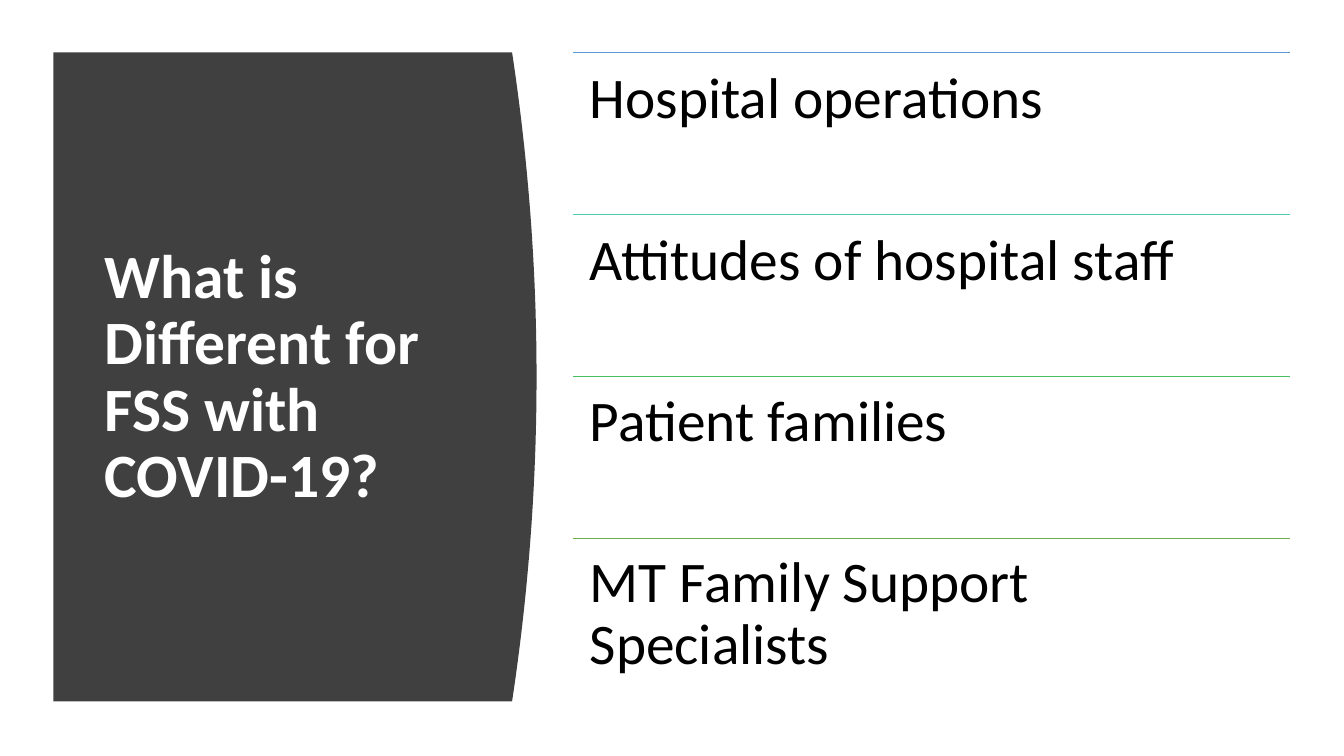
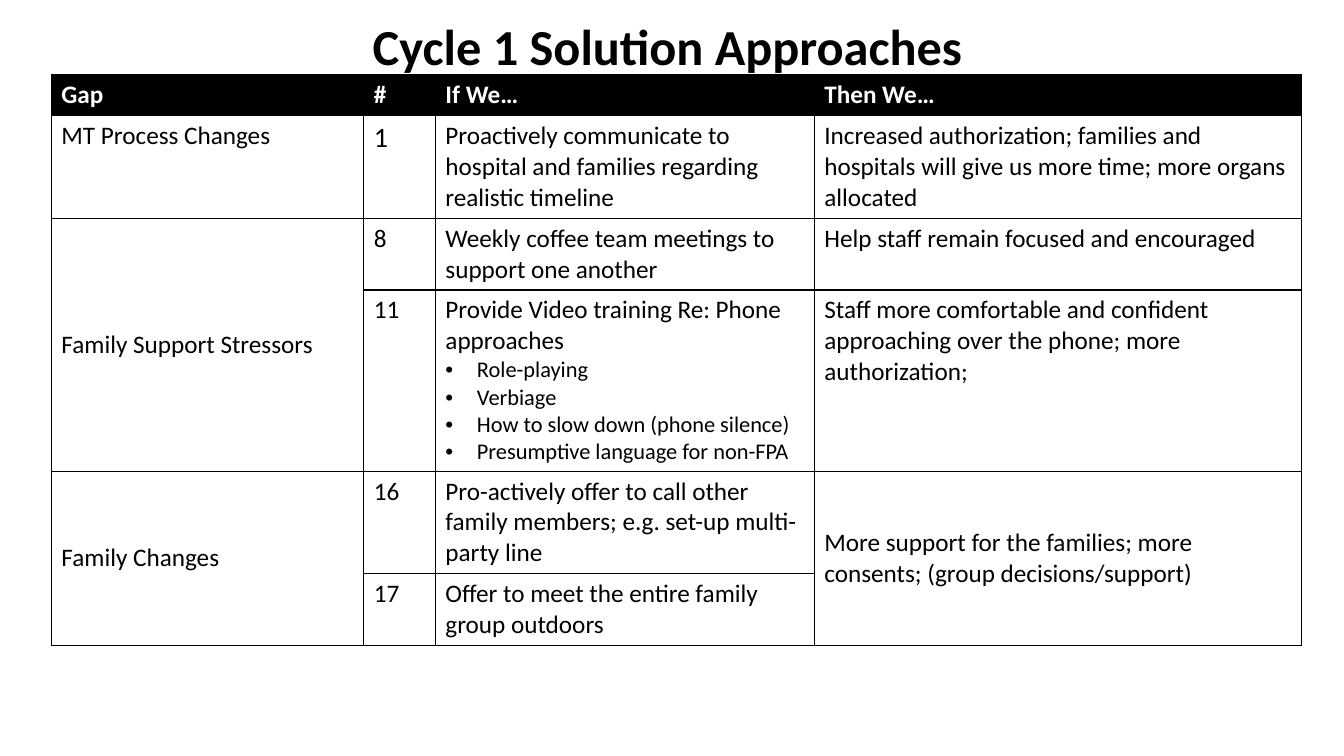
from dataclasses import dataclass

from lxml import etree
from pptx import Presentation
from pptx.dml.color import RGBColor
from pptx.enum.shapes import MSO_CONNECTOR
from pptx.enum.text import MSO_ANCHOR, MSO_AUTO_SIZE, PP_ALIGN
from pptx.oxml.ns import qn
from pptx.slide import Slide
from pptx.util import Pt

STRAIGHT = MSO_CONNECTOR.STRAIGHT
TOP, MIDDLE = MSO_ANCHOR.TOP, MSO_ANCHOR.MIDDLE
LEFT, CENTER = PP_ALIGN.LEFT, PP_ALIGN.CENTER
NO_AUTOFIT = MSO_AUTO_SIZE.NONE
TITLE_AND_CONTENT, TITLE_ONLY = 1, 5


@dataclass(frozen=True)
class Theme:
    font: str = "Calibri"
    black: str = "000000"
    white: str = "FFFFFF"
    panel: str = "404040"
    panel_title: float = 44
    table_title: float = 36
    topic: float = 41
    cell: float = 18
    large_cell: float = 20
    bullet: float = 16
    line_spacing: float = 0.9
    font_height: float = 1.22
    rule_width: float = 1


@dataclass(frozen=True)
class Box:
    left: float
    top: float
    width: float
    height: float

    @property
    def bottom(self) -> float:
        return self.top + self.height


@dataclass(frozen=True)
class Topic:
    text: str
    rule_color: str


@dataclass(frozen=True)
class TableCell:
    row: int
    column: int
    text: str
    bullets: tuple[str, ...] = ()
    size: float = 18
    row_span: int = 1


THEME = Theme()
PANEL = Box(38.2, 37.4, 327.6, 463.7)
PANEL_BULGE = 17.5
CURVE_STEPS = 48
TOPIC_LIST = Box(409, 37.4, 512.6, 463.2)
TOPIC_INSET = 12.2
TOPICS = (
    Topic("Hospital operations", "5B9BD5"),
    Topic("Attitudes of hospital staff", "52CAB8"),
    Topic("Patient families", "49BF64"),
    Topic("MT Family Support Specialists", "70AD47"),
)

TABLE_LEFT, TABLE_TOP = 36.7, 53.3
COLUMN_WIDTHS = (223.2, 51.1, 270.7, 347.8)
ROW_HEIGHTS = (29.5, 73, 51.2, 129, 73, 51.2)
BULLET_INDENT = 22.5
HEADERS = ("Gap", "#", "If We…", "Then We…")
BODY_CELLS = (
    TableCell(1, 0, "MT Process Changes"),
    TableCell(1, 1, "1", size=THEME.large_cell),
    TableCell(1, 2, "Proactively communicate to hospital and families regarding realistic timeline"),
    TableCell(1, 3, "Increased authorization; families and hospitals will give us more time; "
                    "more organs allocated"),
    TableCell(2, 0, "Family Support Stressors", row_span=2),
    TableCell(2, 1, "8"),
    TableCell(2, 2, "Weekly coffee team meetings to support one another"),
    TableCell(2, 3, "Help staff remain focused and encouraged"),
    TableCell(3, 1, "11"),
    TableCell(3, 2, "Provide Video training Re: Phone approaches",
              ("Role-playing", "Verbiage", "How to slow down (phone silence)",
               "Presumptive language for non-FPA")),
    TableCell(3, 3, "Staff more comfortable and confident approaching over the phone; "
                    "more authorization;"),
    TableCell(4, 0, "Family Changes", row_span=2),
    TableCell(4, 1, "16"),
    TableCell(4, 2, "Pro-actively offer to call other family members; e.g. set-up multi-party line"),
    TableCell(4, 3, "More support for the families; more consents; (group decisions/support)",
              row_span=2),
    TableCell(5, 1, "17"),
    TableCell(5, 2, "Offer to meet the entire family group outdoors"),
)


def add_run(paragraph, text: str, size: float, color: str = THEME.black,
            bold: bool = False) -> None:
    run = paragraph.add_run()
    run.text = text
    run.font.name = THEME.font
    run.font.size = Pt(size)
    run.font.bold = bold
    run.font.color.rgb = RGBColor.from_string(color)


def place(shape, box: Box) -> None:
    shape.left, shape.top = Pt(box.left), Pt(box.top)
    shape.width, shape.height = Pt(box.width), Pt(box.height)


def set_bullet(paragraph, character: str = "", indent: float = 0) -> None:
    """Set a hanging bullet, or remove the inherited one when no character is given."""
    properties = paragraph._p.get_or_add_pPr()
    properties.set("marL", str(Pt(indent)))
    properties.set("indent", str(-Pt(indent)))
    if character:
        font = etree.SubElement(properties, qn("a:buFont"))
        font.set("typeface", "Arial")
        etree.SubElement(properties, qn("a:buChar")).set("char", character)
    else:
        etree.SubElement(properties, qn("a:buNone"))


def set_title(slide: Slide, text: str, box: Box, size: float, color: str,
              alignment: PP_ALIGN, anchor: MSO_ANCHOR) -> None:
    title = slide.shapes.title
    place(title, box)
    frame = title.text_frame
    frame.word_wrap = True
    frame.auto_size = NO_AUTOFIT
    frame.vertical_anchor = anchor
    paragraph = frame.paragraphs[0]
    paragraph.alignment = alignment
    paragraph.line_spacing = THEME.line_spacing
    add_run(paragraph, text, size, color, bold=True)


def add_curved_panel(slide: Slide) -> None:
    """Draw the panel with a parabolic right edge, behind the title."""
    edge = []
    for step in range(CURVE_STEPS + 1):
        offset = 2 * step / CURVE_STEPS - 1
        edge.append((Pt(PANEL.left + PANEL.width + PANEL_BULGE * (1 - offset ** 2)),
                     Pt(PANEL.top + PANEL.height * step / CURVE_STEPS)))
    builder = slide.shapes.build_freeform(Pt(PANEL.left), Pt(PANEL.top))
    builder.add_line_segments([*edge, (Pt(PANEL.left), Pt(PANEL.bottom))], close=True)
    panel = builder.convert_to_shape()
    panel.shadow.inherit = False
    panel.fill.solid()
    panel.fill.fore_color.rgb = RGBColor.from_string(THEME.panel)
    panel.line.fill.background()
    slide.shapes.title.element.addprevious(panel.element)


def add_rule(slide: Slide, top: float, color: str) -> None:
    rule = slide.shapes.add_connector(
        STRAIGHT, Pt(TOPIC_LIST.left), Pt(top),
        Pt(TOPIC_LIST.left + TOPIC_LIST.width), Pt(top))
    rule.line.color.rgb = RGBColor.from_string(color)
    rule.line.width = Pt(THEME.rule_width)
    etree.SubElement(rule.element.spPr, qn("a:effectLst"))


def add_topics(slide: Slide) -> None:
    """Fill the body so that each topic starts below its own rule."""
    body = slide.placeholders[1]
    place(body, TOPIC_LIST)
    frame = body.text_frame
    frame.word_wrap = True
    frame.auto_size = NO_AUTOFIT
    frame.vertical_anchor = TOP
    frame.margin_left = frame.margin_right = Pt(TOPIC_INSET)
    frame.margin_top = frame.margin_bottom = Pt(TOPIC_INSET)
    pitch = TOPIC_LIST.height / len(TOPICS)
    line_height = THEME.topic * THEME.font_height * THEME.line_spacing
    for index, topic in enumerate(TOPICS):
        add_rule(slide, TOPIC_LIST.top + index * pitch, topic.rule_color)
        paragraph = frame.add_paragraph() if index else frame.paragraphs[0]
        set_bullet(paragraph)
        paragraph.line_spacing = THEME.line_spacing
        paragraph.space_before = Pt(pitch - line_height if index else 0)
        paragraph.space_after = Pt(0)
        add_run(paragraph, topic.text, THEME.topic)


def set_borders(cell) -> None:
    properties = cell._tc.get_or_add_tcPr()
    for position, side in enumerate(("lnL", "lnR", "lnT", "lnB")):
        line = etree.Element(qn(f"a:{side}"), w=str(Pt(THEME.rule_width)))
        fill = etree.SubElement(line, qn("a:solidFill"))
        etree.SubElement(fill, qn("a:srgbClr")).set("val", THEME.black)
        properties.insert(position, line)


def add_solution_table(slide: Slide) -> None:
    table = slide.shapes.add_table(
        len(ROW_HEIGHTS), len(COLUMN_WIDTHS), Pt(TABLE_LEFT), Pt(TABLE_TOP),
        Pt(sum(COLUMN_WIDTHS)), Pt(sum(ROW_HEIGHTS))).table
    table.horz_banding = False
    for column, width in zip(table.columns, COLUMN_WIDTHS):
        column.width = Pt(width)
    for row, height in zip(table.rows, ROW_HEIGHTS):
        row.height = Pt(height)
    for cell in table.iter_cells():
        cell.fill.background()
        set_borders(cell)

    for column, text in enumerate(HEADERS):
        cell = table.cell(0, column)
        cell.fill.solid()
        cell.fill.fore_color.rgb = RGBColor.from_string(THEME.black)
        add_run(cell.text_frame.paragraphs[0], text, THEME.cell, THEME.white, bold=True)

    for entry in BODY_CELLS:
        cell = table.cell(entry.row, entry.column)
        if entry.row_span > 1:
            cell.merge(table.cell(entry.row + entry.row_span - 1, entry.column))
            cell.vertical_anchor = MIDDLE
        add_run(cell.text_frame.paragraphs[0], entry.text, entry.size)
        for text in entry.bullets:
            paragraph = cell.text_frame.add_paragraph()
            set_bullet(paragraph, "•", BULLET_INDENT)
            add_run(paragraph, text, THEME.bullet)


def add_differences_slide(presentation) -> None:
    slide = presentation.slides.add_slide(presentation.slide_layouts[TITLE_AND_CONTENT])
    set_title(slide, "What is Different for FSS with COVID-19?",
              Box(67.7, 79.9, 269.3, 380), THEME.panel_title, THEME.white, LEFT, MIDDLE)
    add_curved_panel(slide)
    add_topics(slide)


def add_solutions_slide(presentation) -> None:
    slide = presentation.slides.add_slide(presentation.slide_layouts[TITLE_ONLY])
    set_title(slide, "Cycle 1 Solution Approaches",
              Box(30.2, 12.2, 893.5, 66.2), THEME.table_title, THEME.black, CENTER, TOP)
    add_solution_table(slide)


def main() -> None:
    presentation = Presentation()
    presentation.slide_width, presentation.slide_height = Pt(960), Pt(540)
    add_differences_slide(presentation)
    add_solutions_slide(presentation)
    presentation.save("out.pptx")


if __name__ == "__main__":
    main()
